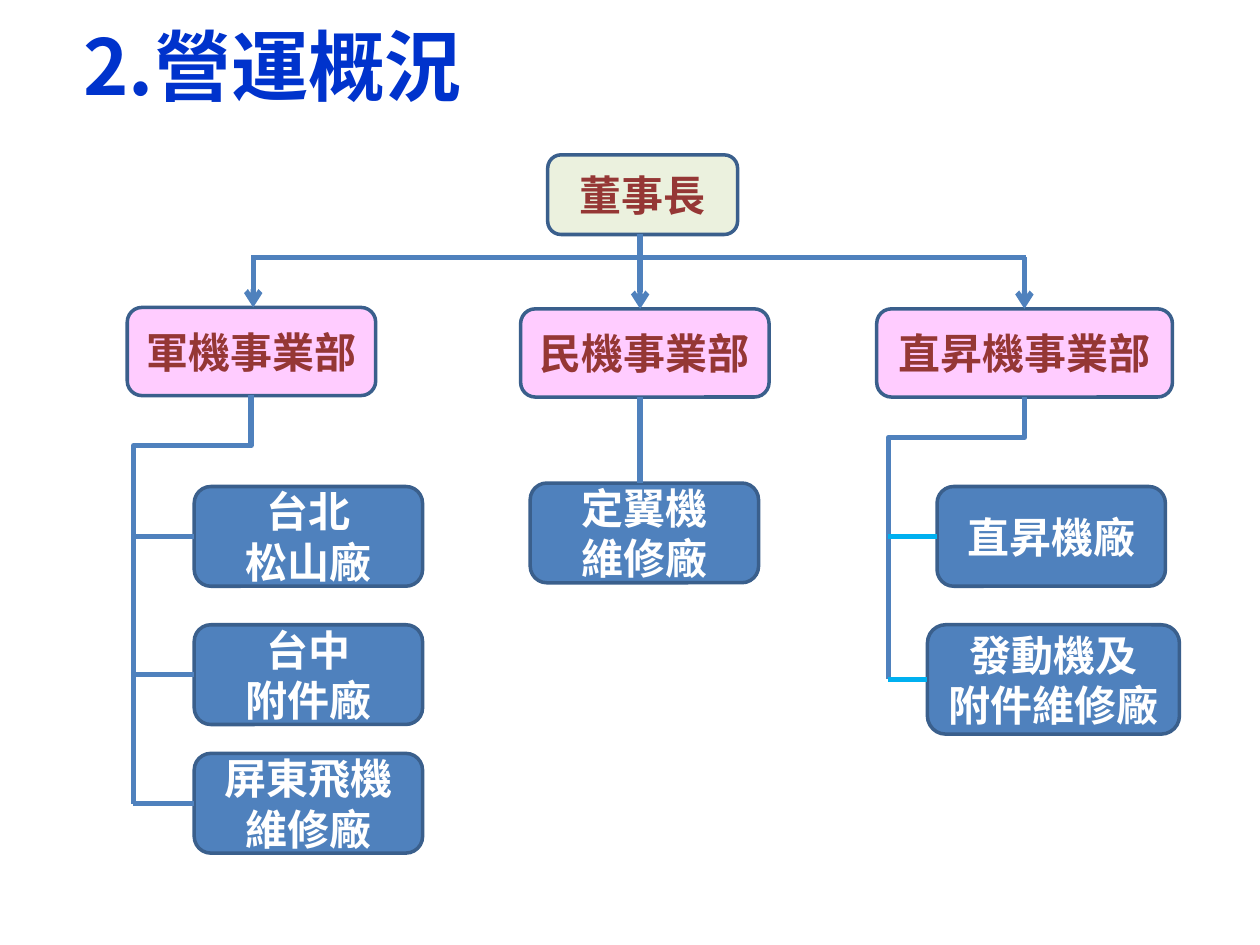
from dataclasses import dataclass

from lxml.etree import SubElement
from pptx import Presentation
from pptx.dml.color import RGBColor
from pptx.enum.shapes import MSO_CONNECTOR, MSO_SHAPE
from pptx.enum.text import MSO_ANCHOR, MSO_AUTO_SIZE, PP_ALIGN
from pptx.oxml.ns import qn
from pptx.util import Pt


@dataclass(frozen=True)
class Theme:
    face: str = "Noto Sans CJK SC"
    title: str = "0033CC"
    brown: str = "953735"
    white: str = "FFFFFF"
    cream: str = "EBF1DE"
    pink: str = "FFCCFF"
    blue: str = "4F81BD"
    edge: str = "3A5F8C"
    cyan: str = "00B0F0"
    head: int = 44
    body: int = 24
    rule: int = 3
    rim: int = 2


def assign(item, values):
    for name, value in values.items():
        setattr(item, name, value)


def paint(color, code):
    color.rgb = RGBColor.from_string(code)


class Chart:
    def __init__(self, slide, theme):
        self.slide = slide
        self.theme = theme

    def label(self, shape, text, size, color, align, anchor):
        frame = shape.text_frame
        assign(frame, {"text": text, "word_wrap": True,
                       "auto_size": MSO_AUTO_SIZE.NONE,
                       "vertical_anchor": anchor})
        for para in frame.paragraphs:
            para.alignment = align
            for run in para.runs:
                assign(run.font, {"size": Pt(size), "bold": True,
                                  "name": self.theme.face})
                paint(run.font.color, color)
                east = SubElement(run._r.get_or_add_rPr(), qn("a:ea"))
                east.set("typeface", self.theme.face)

    def title(self, text, left, top, width, height):
        shape = self.slide.shapes.title
        assign(shape, {"left": Pt(left), "top": Pt(top),
                       "width": Pt(width), "height": Pt(height)})
        self.label(shape, text, self.theme.head, self.theme.title,
                   PP_ALIGN.LEFT, MSO_ANCHOR.TOP)
        shape.text_frame.paragraphs[0].line_spacing = Pt(60)

    def box(self, text, place, fill, color):
        shape = self.slide.shapes.add_shape(
            MSO_SHAPE.ROUNDED_RECTANGLE, *map(Pt, place))
        shape.shadow.inherit = False
        shape.fill.solid()
        paint(shape.fill.fore_color, fill)
        paint(shape.line.color, self.theme.edge)
        shape.line.width = Pt(self.theme.rim)
        self.label(shape, text, self.theme.body, color,
                   PP_ALIGN.CENTER, MSO_ANCHOR.MIDDLE)

    def line(self, x1, y1, x2, y2, color=None, arrow=False,
             kind=MSO_CONNECTOR.STRAIGHT):
        link = self.slide.shapes.add_connector(
            kind, Pt(x1), Pt(y1), Pt(x2), Pt(y2))
        paint(link.line.color, color or self.theme.blue)
        link.line.width = Pt(self.theme.rule)
        props = link.element.spPr
        if arrow:
            SubElement(props.find(qn("a:ln")), qn("a:tailEnd")).set("type", "arrow")
        SubElement(props, qn("a:effectLst"))
        return link

    def elbow(self, x1, y1, x2, y2, bend):
        """Run down, left at height bend, then down: a quarter-turned elbow."""
        midx, midy = (x1 + x2) / 2, (y1 + y2) / 2
        wide, tall = (x1 - x2) / 2, (y2 - y1) / 2
        link = self.line(midx - tall, midy - wide, midx + tall, midy + wide,
                         kind=MSO_CONNECTOR.ELBOW)
        props = link.element.spPr
        props.find(qn("a:xfrm")).set("rot", "5400000")
        shape = props.find(qn("a:prstGeom"))
        guides = shape.find(qn("a:avLst"))
        if guides is None:
            guides = SubElement(shape, qn("a:avLst"))
        guide = SubElement(guides, qn("a:gd"))
        guide.set("name", "adj1")
        guide.set("fmla", f"val {round(100000 * (bend - y1) / (y2 - y1))}")


def main():
    deck = Presentation()
    assign(deck, {"slide_width": Pt(720), "slide_height": Pt(540)})
    theme = Theme()
    chart = Chart(deck.slides.add_slide(deck.slide_layouts[5]), theme)
    chart.title("2.營運概況", 40.5, 0, 648, 62.5)

    chart.box("董事長", (313, 88.5, 108.5, 45.5), theme.cream, theme.brown)
    units = [("軍機事業部", 72.7, 175.7, 142),
             ("民機事業部", 297.5, 176.5, 142),
             ("直昇機事業部", 501, 176.5, 169)]
    for text, left, top, width in units:
        chart.box(text, (left, top, width, 50.4), theme.pink, theme.brown)

    plants = [("台北\n松山廠", 111, 278, 130.5, 57),
              ("台中\n附件廠", 111, 357, 130.5, 57),
              ("屏東飛機維修廠", 111, 430.5, 130.5, 57),
              ("定翼機\n維修廠", 303, 276, 130.5, 57),
              ("直昇機廠", 535.5, 278, 130.5, 57),
              ("發動機及\n附件維修廠", 530, 357, 144, 62.5)]
    for text, *place in plants:
        chart.box(text, place, theme.blue, theme.white)

    bus, trunk = 147, 365.8
    chart.line(trunk, 133.5, trunk, bus)
    chart.line(143.5, bus, 586.5, bus)
    for x, (_, _, top, _) in zip((144.7, trunk, 585.4), units):
        chart.line(x, bus, x, top, arrow=True)

    chart.elbow(143.5, 226, 76.3, 459.4, 254.7)
    chart.line(trunk, 227, trunk, 276)
    chart.elbow(585.4, 227, 507.6, 388, 250)
    for x, color, group in ((76.3, theme.blue, plants[:3]),
                            (507.6, theme.cyan, plants[4:])):
        for _, left, top, _, height in group:
            y = top + height / 2
            chart.line(x, y, left, y, color)

    deck.save("out.pptx")


if __name__ == "__main__":
    main()
